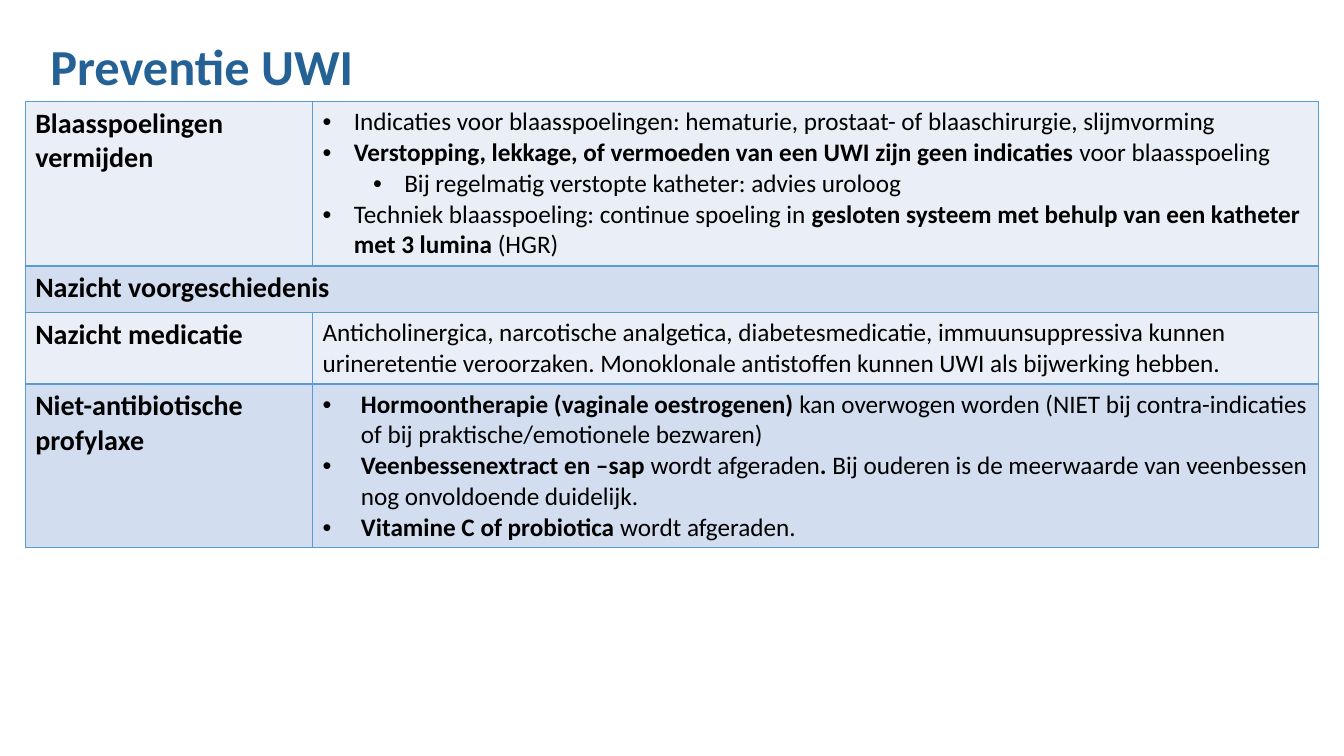
from lxml.etree import SubElement
from pptx import Presentation
from pptx.dml.color import RGBColor
from pptx.enum.text import MSO_ANCHOR
from pptx.oxml.ns import qn
from pptx.util import Inches, Pt

COLORS = {
    "title": "246194",
    "text": "000000",
    "border": "5B9BD5",
    "light": "EAEFF7",
    "dark": "D2DEEF",
}
FONT = "Calibri"
BOLD_MARK = "**"
LABEL_SIZE, BODY_SIZE, TITLE_SIZE = 20, 18, 36
COLUMN_WIDTHS = [2.85, 9.98]
LEVEL_STEP = 0.5

ROWS = [
    ("Blaasspoelingen vermijden", 1.63, 0.31, [
        (0, "Indicaties voor blaasspoelingen: hematurie, prostaat- of blaaschirurgie, slijmvorming"),
        (0, "**Verstopping, lekkage, of vermoeden van een UWI zijn geen indicaties **voor blaasspoeling"),
        (1, "Bij regelmatig verstopte katheter: advies uroloog"),
        (0, "Techniek blaasspoeling: continue spoeling in **gesloten systeem met behulp van "
            "een katheter met 3 lumina** (HGR)"),
    ]),
    ("Nazicht voorgeschiedenis", 0.46, 0, []),
    ("Nazicht medicatie", 0.71, 0, [
        (0, "Anticholinergica, narcotische analgetica, diabetesmedicatie, immuunsuppressiva kunnen "
            "urineretentie veroorzaken. Monoklonale antistoffen kunnen UWI als bijwerking hebben."),
    ]),
    ("Niet-antibiotische profylaxe", 1.62, 0.38, [
        (0, "**Hormoontherapie (vaginale oestrogenen) **kan overwogen worden "
            "(NIET bij contra-indicaties of bij praktische/emotionele bezwaren)"),
        (0, "**Veenbessenextract en –sap **wordt afgeraden**. **Bij ouderen is de meerwaarde "
            "van veenbessen nog onvoldoende duidelijk."),
        (0, "**Vitamine C of probiotica **wordt afgeraden."),
    ]),
]


def write_runs(paragraph, text, size, color):
    for index, part in enumerate(text.split(BOLD_MARK)):
        if part:
            run = paragraph.add_run()
            run.text = part
            run.font.name = FONT
            run.font.size = Pt(size)
            run.font.bold = index % 2 == 1
            run.font.color.rgb = RGBColor.from_string(COLORS[color])


def add_bullet(paragraph, level, hanging):
    paragraph.level = level
    properties = paragraph._p.get_or_add_pPr()
    properties.set("marL", str(Inches(hanging + level * LEVEL_STEP)))
    properties.set("indent", str(-Inches(hanging)))
    SubElement(properties, qn("a:buFont")).set("typeface", "Arial")
    SubElement(properties, qn("a:buChar")).set("char", "•")


def style_cell(cell, fill):
    properties = cell._tc.get_or_add_tcPr()
    for side in ("lnL", "lnR", "lnT", "lnB"):
        line = SubElement(properties, qn(f"a:{side}"), w=str(Pt(1)))
        solid = SubElement(line, qn("a:solidFill"))
        SubElement(solid, qn("a:srgbClr")).set("val", COLORS["border"])
    cell.fill.solid()
    cell.fill.fore_color.rgb = RGBColor.from_string(COLORS[fill])


def write_body(cell, items, hanging):
    text_frame = cell.text_frame
    for index, (level, text) in enumerate(items):
        paragraph = text_frame.add_paragraph() if index else text_frame.paragraphs[0]
        if hanging:
            add_bullet(paragraph, level, hanging)
        write_runs(paragraph, text, BODY_SIZE, "text")


def add_title(slide, text):
    box = slide.shapes.add_textbox(Inches(0.4), Inches(0.35), Inches(12.18), Inches(0.66))
    text_frame = box.text_frame
    text_frame.word_wrap = True
    text_frame.vertical_anchor = MSO_ANCHOR.BOTTOM
    paragraph = text_frame.paragraphs[0]
    paragraph.line_spacing = 0.9
    write_runs(paragraph, BOLD_MARK + text, TITLE_SIZE, "title")


def add_prevention_table(slide):
    total_height = sum(height for _, height, _, _ in ROWS)
    table = slide.shapes.add_table(
        len(ROWS), len(COLUMN_WIDTHS), Inches(0.25), Inches(1.01),
        Inches(sum(COLUMN_WIDTHS)), Inches(total_height),
    ).table
    table.first_row = False
    table.horz_banding = False
    for column, width in zip(table.columns, COLUMN_WIDTHS):
        column.width = Inches(width)
    for index, (label, height, hanging, items) in enumerate(ROWS):
        row = table.rows[index]
        row.height = Inches(height)
        label_cell, body_cell = row.cells
        for cell in (label_cell, body_cell):
            style_cell(cell, "dark" if index % 2 else "light")
        write_runs(label_cell.text_frame.paragraphs[0], BOLD_MARK + label, LABEL_SIZE, "text")
        if items:
            write_body(body_cell, items, hanging)
        else:
            label_cell.merge(body_cell)


def main():
    presentation = Presentation()
    presentation.slide_width = Inches(13.33)
    presentation.slide_height = Inches(7.5)
    slide = presentation.slides.add_slide(presentation.slide_layouts[6])
    add_title(slide, "Preventie UWI")
    add_prevention_table(slide)
    presentation.save("out.pptx")


if __name__ == "__main__":
    main()
